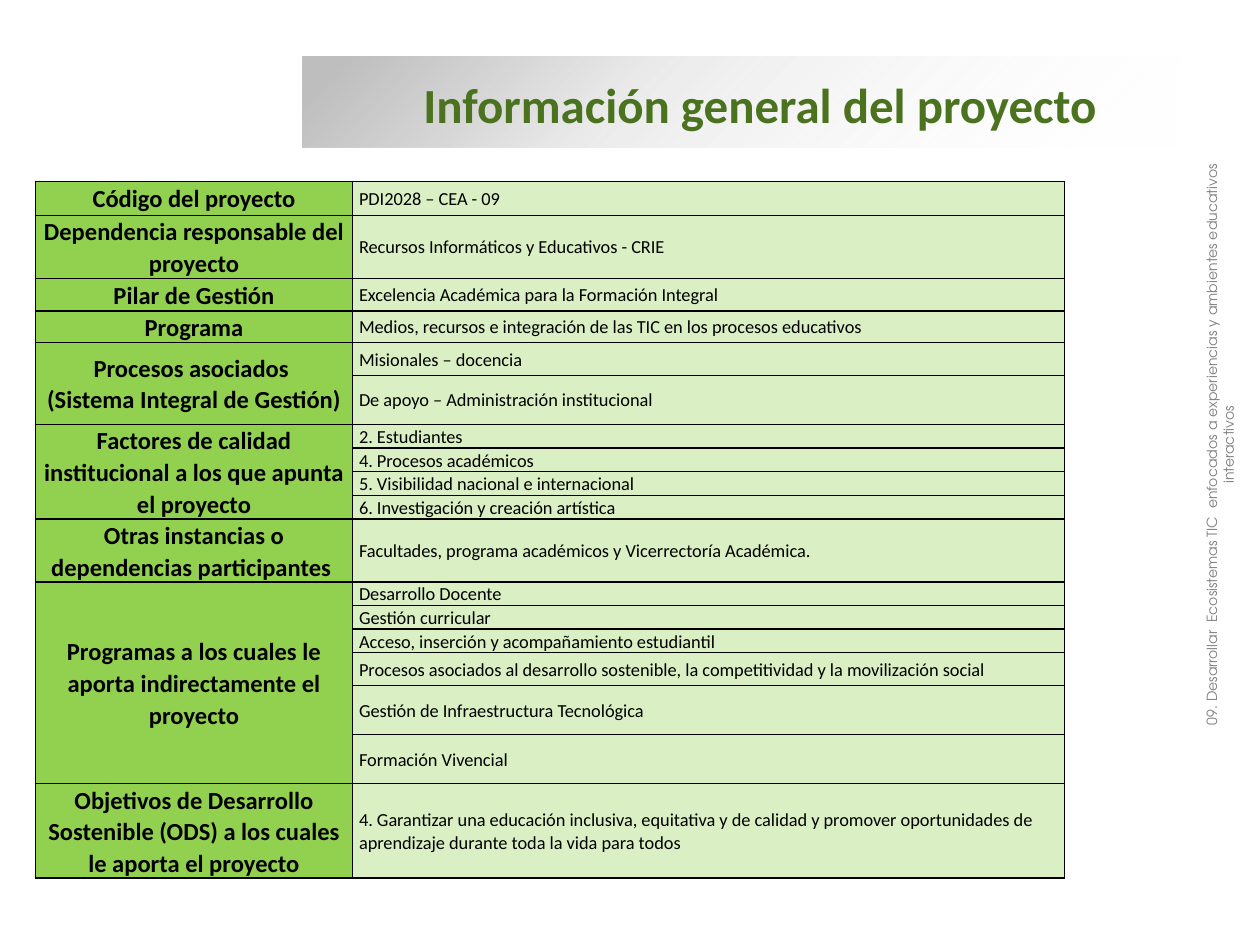
from lxml import etree
from pptx import Presentation
from pptx import util as u
from pptx.dml.color import RGBColor
from pptx.enum import shapes, text
from pptx.oxml import parse_xml
from pptx.oxml.ns import nsdecls, qn

Inches, Pt = u.Inches, u.Pt
COLORS = {
    "heading": "4B731F", "label": "92D050", "value": "DAEFC3",
    "ink": "000000", "side": "808080", "band": "BFBFBF", "fade": "FFFFFF",
}
LABEL, VALUE = 0, 1

# Each group: label, then its (value, row height) rows
GROUPS = [
    ("Código del proyecto", [("PDI2028 – CEA - 09", 0.27)]),
    ("Dependencia responsable del proyecto",
     [("Recursos Informáticos y Educativos - CRIE", 0.27)]),
    ("Pilar de Gestión", [("Excelencia Académica para la Formación Integral", 0.26)]),
    ("Programa",
     [("Medios, recursos e integración de las TIC en los procesos educativos", 0.17)]),
    ("Procesos asociados \n(Sistema Integral de Gestión)",
     [("Misionales – docencia", 0.26),
      ("De apoyo – Administración institucional", 0.39)]),
    ("Factores de calidad institucional a los que apunta el proyecto",
     [("2. Estudiantes", 0.17),
      ("4. Procesos académicos", 0.13),
      ("5. Visibilidad nacional e internacional", 0.17),
      ("6. Investigación y creación artística", 0.17)]),
    ("Otras instancias o dependencias participantes ",
     [("Facultades, programa académicos y Vicerrectoría Académica.", 0.26)]),
    ("Programas a los cuales le aporta indirectamente el proyecto",
     [("Desarrollo Docente", 0.13),
      ("Gestión curricular", 0.13),
      ("Acceso, inserción y acompañamiento estudiantil", 0.13),
      ("Procesos asociados al desarrollo sostenible, la competitividad "
       "y la movilización social", 0.26),
      ("Gestión de Infraestructura Tecnológica", 0.39),
      ("Formación Vivencial", 0.39)]),
    ("Objetivos de Desarrollo Sostenible (ODS) a los cuales le aporta el proyecto",
     [("4. Garantizar una educación inclusiva, equitativa y de calidad y promover "
       "oportunidades de aprendizaje durante toda la vida para todos", 0.65)]),
]


def add_text(paragraph, words, size, color, font="Calibri", bold=False):
    for i, line in enumerate(words.split("\n")):
        if i:
            paragraph.add_line_break()
        run = paragraph.add_run()
        run.text = line
        run.font.name = font
        run.font.size = Pt(size)
        run.font.bold = bold
        run.font.color.rgb = RGBColor.from_string(COLORS[color])


def style_cell(cell, fill, inset):
    cell.fill.solid()
    cell.fill.fore_color.rgb = RGBColor.from_string(COLORS[fill])
    cell.margin_left = cell.margin_right = Inches(inset)
    cell.margin_top = cell.margin_bottom = 0
    cell.vertical_anchor = text.MSO_ANCHOR.MIDDLE
    properties = cell._tc.get_or_add_tcPr()
    for i, side in enumerate(("lnL", "lnR", "lnT", "lnB")):
        properties.insert(i, parse_xml(
            f'<a:{side} {nsdecls("a")} w="12700"><a:solidFill>'
            f'<a:srgbClr val="{COLORS["ink"]}"/></a:solidFill></a:{side}>'))


prs = Presentation()
prs.slide_width, prs.slide_height = Inches(10), Inches(7.5)
slide = prs.slides.add_slide(prs.slide_layouts[5])

# Heading
heading = slide.shapes.title
heading.left, heading.top = Inches(3.26), Inches(0.54)
heading.width, heading.height = Inches(6.2), Inches(0.57)
heading.text_frame.word_wrap = True
heading.text_frame.auto_size = text.MSO_AUTO_SIZE.SHAPE_TO_FIT_TEXT
heading.text_frame.vertical_anchor = text.MSO_ANCHOR.MIDDLE
heading_line = heading.text_frame.paragraphs[0]
heading_line.alignment = text.PP_ALIGN.LEFT
add_text(heading_line, "Información general del proyecto", 28, "heading", bold=True)

# Fading band behind the heading
band = slide.shapes.add_shape(
    shapes.MSO_SHAPE.RECTANGLE, Inches(2.4), Inches(0.45), Inches(6.98), Inches(0.72))
band.shadow.inherit = False
band.line.fill.background()
band.fill.gradient()
gradient = band._element.spPr.find(qn("a:gradFill"))
stops = gradient.find(qn("a:gsLst"))
for stop in list(stops):
    stops.remove(stop)
for position, color, alpha in ((5, "band", 100), (37, "band", 31), (100, "fade", 0)):
    stop = etree.SubElement(stops, qn("a:gs"), pos=str(position * 1000))
    tint = etree.SubElement(stop, qn("a:srgbClr"), val=COLORS[color])
    etree.SubElement(tint, qn("a:alpha"), val=str(alpha * 1000))
gradient.find(qn("a:lin")).set("ang", str(45 * 60000))
heading._element.addprevious(band._element)

# Project table
row_count = sum(len(rows) for _, rows in GROUPS)
frame = slide.shapes.add_table(
    row_count, 2, Inches(0.28), Inches(1.44), Inches(8.17), Inches(5.54))
project = frame.table
project.first_row = project.horz_banding = False
project.columns[LABEL].width = Inches(2.52)
project.columns[VALUE].width = Inches(5.65)

row = 0
for label, rows in GROUPS:
    first = row
    for value, height in rows:
        project.rows[row].height = Inches(height)
        style_cell(project.cell(row, LABEL), "label", 0.04)
        value_cell = project.cell(row, VALUE)
        style_cell(value_cell, "value", 0.05)
        value_line = value_cell.text_frame.paragraphs[0]
        value_line.line_spacing = 1.07
        add_text(value_line, value, 10.5, "ink")
        row += 1
    label_cell = project.cell(first, LABEL)
    if len(rows) > 1:
        label_cell.merge(project.cell(row - 1, LABEL))
    label_line = label_cell.text_frame.paragraphs[0]
    label_line.alignment = text.PP_ALIGN.CENTER
    label_line.line_spacing = 1.07
    add_text(label_line, label, 14, "ink", bold=True)
frame.height = Inches(5.54)

# Vertical project name on the right edge
side = slide.shapes.add_textbox(Inches(7.33), Inches(3.28), Inches(4.84), Inches(0.5))
side.rotation = 270
side.text_frame.word_wrap = True
side.text_frame.auto_size = text.MSO_AUTO_SIZE.SHAPE_TO_FIT_TEXT
side_line = side.text_frame.paragraphs[0]
side_line.alignment = text.PP_ALIGN.CENTER
add_text(side_line, "09. Desarrollar  Ecosistemas TIC  enfocados a experiencias y ambientes "
         "educativos interactivos", 8, "side", font="TeX Gyre Adventor")

prs.save("out.pptx")
